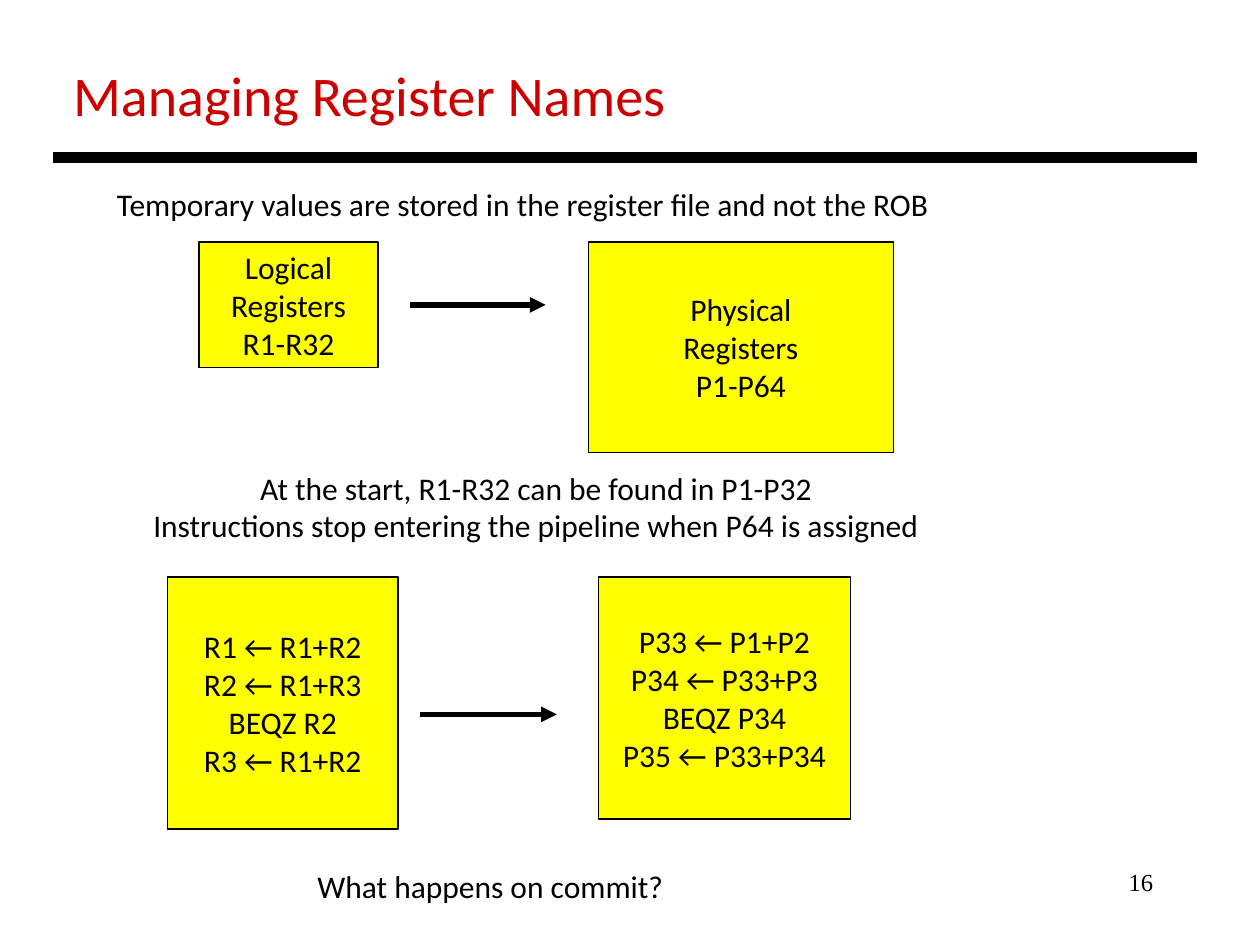
"""Build the slide on managing register names."""

from dataclasses import dataclass

from pptx import Presentation
from pptx.dml.color import RGBColor
from pptx.enum.shapes import MSO_CONNECTOR, MSO_SHAPE
from pptx.enum.text import MSO_ANCHOR, MSO_AUTO_SIZE, PP_ALIGN
from pptx.oxml.ns import qn
from pptx.oxml.xmlchemy import OxmlElement
from pptx.util import Inches, Pt


@dataclass(frozen=True)
class Theme:
    """Colours, fonts and sizes of the deck."""

    ink: RGBColor = RGBColor(0x00, 0x00, 0x00)
    heading: RGBColor = RGBColor(0xCC, 0x00, 0x00)
    box: RGBColor = RGBColor(0xFF, 0xFF, 0x00)
    font: str = "Calibri"
    number_font: str = "Times New Roman"
    title_size: int = 32
    text_size: int = 18
    number_size: int = 14
    rule_width: float = 6
    arrow_width: float = 3
    border_width: float = 0.75


class SlideBuilder:
    """Hold the theme and the current slide, and add elements to it."""

    def __init__(self, slide, theme):
        """Keep the slide and its theme."""
        self.slide = slide
        self.theme = theme

    def add_lines(self, frame, lines, align=PP_ALIGN.LEFT, size=None, color=None, font=None):
        """Add one formatted paragraph for each line."""
        for index, line in enumerate(lines):
            paragraph = frame.paragraphs[0] if index == 0 else frame.add_paragraph()
            paragraph.alignment = align
            run = paragraph.add_run()
            run.text = line
            run.font.size = Pt(size or self.theme.text_size)
            run.font.name = font or self.theme.font
            run.font.color.rgb = color or self.theme.ink

    def title(self, text, left, top, width, height):
        """Place and fill the title placeholder."""
        heading = self.slide.shapes.title
        heading.left, heading.top = Inches(left), Inches(top)
        heading.width, heading.height = Inches(width), Inches(height)
        frame = heading.text_frame
        frame.word_wrap = False
        frame.auto_size = MSO_AUTO_SIZE.SHAPE_TO_FIT_TEXT
        frame.vertical_anchor = MSO_ANCHOR.TOP
        self.add_lines(frame, [text], size=self.theme.title_size, color=self.theme.heading)

    def statement(self, lines, left, top, width, height, align=PP_ALIGN.LEFT):
        """Add unwrapped text that sizes its own frame."""
        frame = self.slide.shapes.add_textbox(
            Inches(left), Inches(top), Inches(width), Inches(height)
        ).text_frame
        frame.word_wrap = False
        frame.auto_size = MSO_AUTO_SIZE.SHAPE_TO_FIT_TEXT
        self.add_lines(frame, lines, align)

    def page_number(self, number, left, top, width, height):
        """Add the right-aligned page number."""
        frame = self.slide.shapes.add_textbox(
            Inches(left), Inches(top), Inches(width), Inches(height)
        ).text_frame
        frame.word_wrap = True
        self.add_lines(frame, [number], PP_ALIGN.RIGHT,
                       size=self.theme.number_size, font=self.theme.number_font)

    def box(self, lines, left, top, width, height):
        """Add a bordered box with centred lines."""
        panel = self.slide.shapes.add_shape(
            MSO_SHAPE.RECTANGLE, Inches(left), Inches(top), Inches(width), Inches(height)
        )
        panel.shadow.inherit = False
        panel.fill.solid()
        panel.fill.fore_color.rgb = self.theme.box
        panel.line.color.rgb = self.theme.ink
        panel.line.width = Pt(self.theme.border_width)
        frame = panel.text_frame
        frame.word_wrap = False
        frame.vertical_anchor = MSO_ANCHOR.MIDDLE
        self.add_lines(frame, lines, PP_ALIGN.CENTER)

    def rule(self, start, end, y, width):
        """Add a horizontal line and return it."""
        stroke = self.slide.shapes.add_connector(
            MSO_CONNECTOR.STRAIGHT, Inches(start), Inches(y), Inches(end), Inches(y)
        )
        stroke.line.color.rgb = self.theme.ink
        stroke.line.width = Pt(width)
        stroke.element.spPr.append(OxmlElement("a:effectLst"))
        return stroke

    def arrow(self, start, end, y):
        """Add a horizontal arrow pointing at its end."""
        stroke = self.rule(start, end, y, self.theme.arrow_width)
        head = OxmlElement("a:tailEnd")
        head.set("type", "triangle")
        stroke.element.spPr.find(qn("a:ln")).append(head)


def main():
    """Build and save the slide."""
    deck = Presentation()
    deck.slide_width, deck.slide_height = Inches(10), Inches(7.5)
    theme = Theme()
    builder = SlideBuilder(deck.slides.add_slide(deck.slide_layouts[5]), theme)

    builder.page_number("16", 7.17, 6.83, 2.08, 0.5)
    builder.title("Managing Register Names", 0.48, 0.43, 4.95, 0.64)
    builder.rule(0.42, 9.5, 1.25, theme.rule_width)

    builder.box(["Logical", "Registers", "R1-R32"], 1.58, 1.92, 1.42, 1)
    builder.box(["Physical", "Registers", "P1-P64"], 4.67, 1.92, 2.42, 1.67)
    builder.box(["R1 ← R1+R2", "R2 ← R1+R3", "BEQZ R2", "R3 ← R1+R2"],
                1.33, 4.58, 1.83, 2)
    builder.box(["P33 ← P1+P2", "P34 ← P33+P3", "BEQZ P34", "P35 ← P33+P34"],
                4.75, 4.58, 2, 1.92)
    builder.arrow(3.33, 4.42, 5.67)
    builder.arrow(3.25, 4.33, 2.42)

    builder.statement(
        ["At the start, R1-R32 can be found in P1-P32",
         "Instructions stop entering the pipeline when P64 is assigned"],
        1.08, 3.67, 6.35, 0.71, PP_ALIGN.CENTER,
    )
    builder.statement(["What happens on commit?"], 2.42, 6.83, 2.98, 0.4)
    builder.statement(
        ["Temporary values are stored in the register file and not the ROB"],
        0.83, 1.42, 6.72, 0.4,
    )
    deck.save("out.pptx")


if __name__ == "__main__":
    main()
